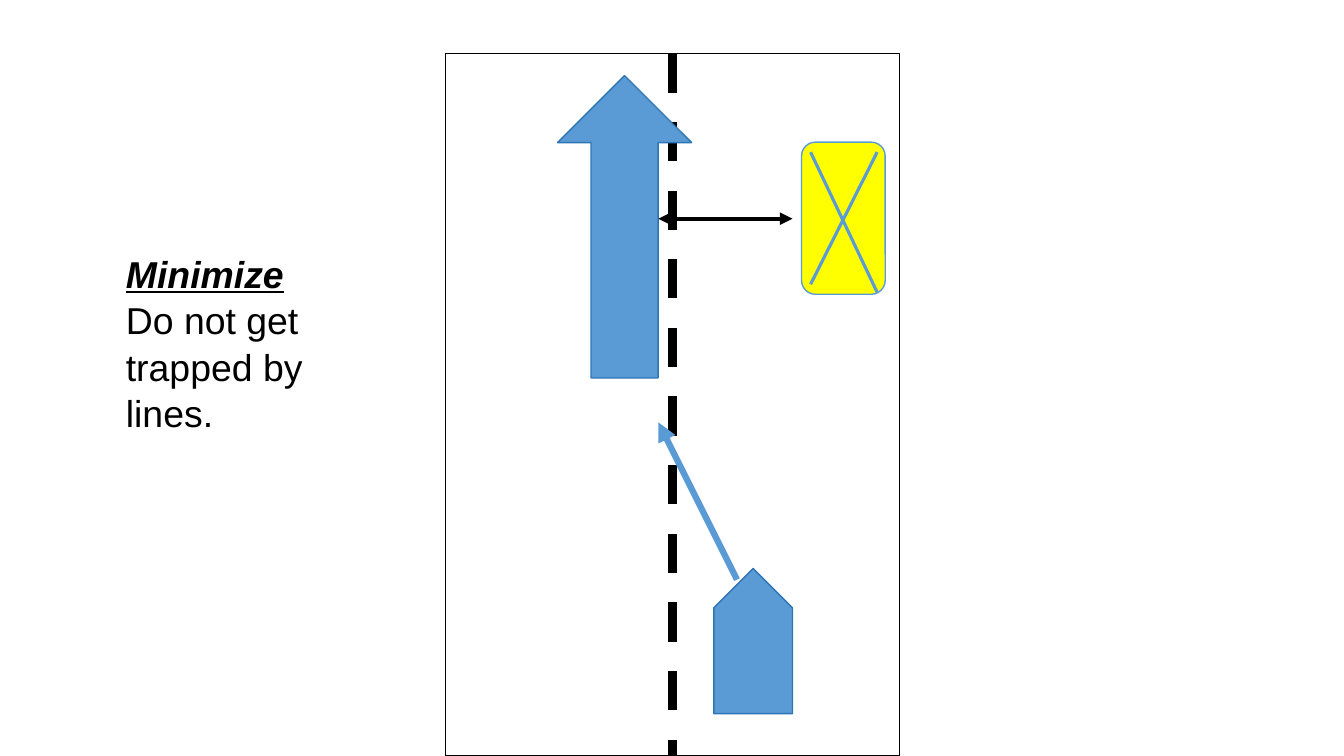
import pptx
import pptx.util
import pptx.dml.color
import pptx.enum.dml
import pptx.enum.shapes
import pptx.oxml.ns
import lxml.etree

Inches, Pt = pptx.util.Inches, pptx.util.Pt
SHAPE = pptx.enum.shapes.MSO_SHAPE
qn = pptx.oxml.ns.qn

# Content
HEADING = "Minimize"
ADVICE = "Do not get trapped by lines."
BLACK, WHITE, YELLOW = "000000", "FFFFFF", "FFFF00"
BLUE, DARK_BLUE = "5B9BD5", "2E75B6"

# Preset, (left, top, width, height), fill, outline, rotation
ROAD = (SHAPE.RECTANGLE, (4.42, 0.53, 4.5, 6.97), WHITE, BLACK, 0)
VEHICLES = [
    (SHAPE.PENTAGON, (6.75, 5.97, 1.44, 0.78), BLUE, DARK_BLUE, 270),
    (SHAPE.UP_ARROW, (5.53, 0.75, 1.33, 3), BLUE, DARK_BLUE, 0),
]
OBSTACLE = (SHAPE.ROUNDED_RECTANGLE, (7.95, 1.41, 0.83, 1.51), YELLOW, BLUE, 0)

# Start, end, colour, width, arrow ends
ARROWS = [
    ((7.31, 5.75), (6.53, 4.19), BLUE, 4.5, ["tailEnd"]),
    ((7.86, 2.17), (6.53, 2.17), BLACK, 3, ["headEnd", "tailEnd"]),
]
CROSS = [((8.7, 1.51), (8.04, 2.82)), ((8.04, 1.51), (8.7, 2.9))]


def rgb(value):
    return pptx.dml.color.RGBColor.from_string(value)


def add_shape(shapes, preset, box, fill, outline, rotation):
    sp = shapes.add_shape(preset, *map(Inches, box))
    sp.shadow.inherit = False
    sp.fill.solid()
    sp.fill.fore_color.rgb = rgb(fill)
    sp.line.color.rgb = rgb(outline)
    sp.line.width = Pt(1)
    sp.rotation = rotation
    return sp


def add_line(shapes, start, end, color, width, ends=()):
    line = shapes.add_connector(pptx.enum.shapes.MSO_CONNECTOR.STRAIGHT,
                                *map(Inches, start + end))
    line.line.color.rgb = rgb(color)
    line.line.width = Pt(width)
    for name in ends:
        lxml.etree.SubElement(line.line._get_or_add_ln(), qn("a:" + name), type="triangle")
    lxml.etree.SubElement(line._element.spPr, qn("a:effectLst"))
    return line


def write(p, text, size=26.7, color=BLACK, emphasis=False):
    p.line_spacing = 1.04
    r = p.add_run()
    r.text = text
    r.font.name = "Arial"
    r.font.size = Pt(size)
    r.font.color.rgb = rgb(color)
    r.font.bold = r.font.italic = r.font.underline = emphasis


prs = pptx.Presentation()
prs.slide_width, prs.slide_height = Inches(13.33), Inches(7.5)
shapes = prs.slides.add_slide(prs.slide_layouts[6]).shapes

# Advice
tf = shapes.add_textbox(*map(Inches, (1.15, 2.42, 2.89, 1.9))).text_frame
tf.word_wrap = True
write(tf.paragraphs[0], HEADING, emphasis=True)
write(tf.add_paragraph(), ADVICE)

# Road with its dashed centre line
add_shape(shapes, *ROAD)
left, top, width, height = ROAD[1]
center = left + width / 2
lane = add_line(shapes, (center, top), (center, top + height), BLACK, 7)
lane.line.dash_style = pptx.enum.dml.MSO_LINE.DASH

# Vehicles and arrows
for vehicle in VEHICLES:
    add_shape(shapes, *vehicle)
for arrow in ARROWS:
    add_line(shapes, *arrow)

# Crossed-out obstacle
group = shapes.add_group_shape()
add_shape(group.shapes, *OBSTACLE)
for start, end in CROSS:
    add_line(group.shapes, start, end, BLUE, 2.25)

prs.save("out.pptx")
